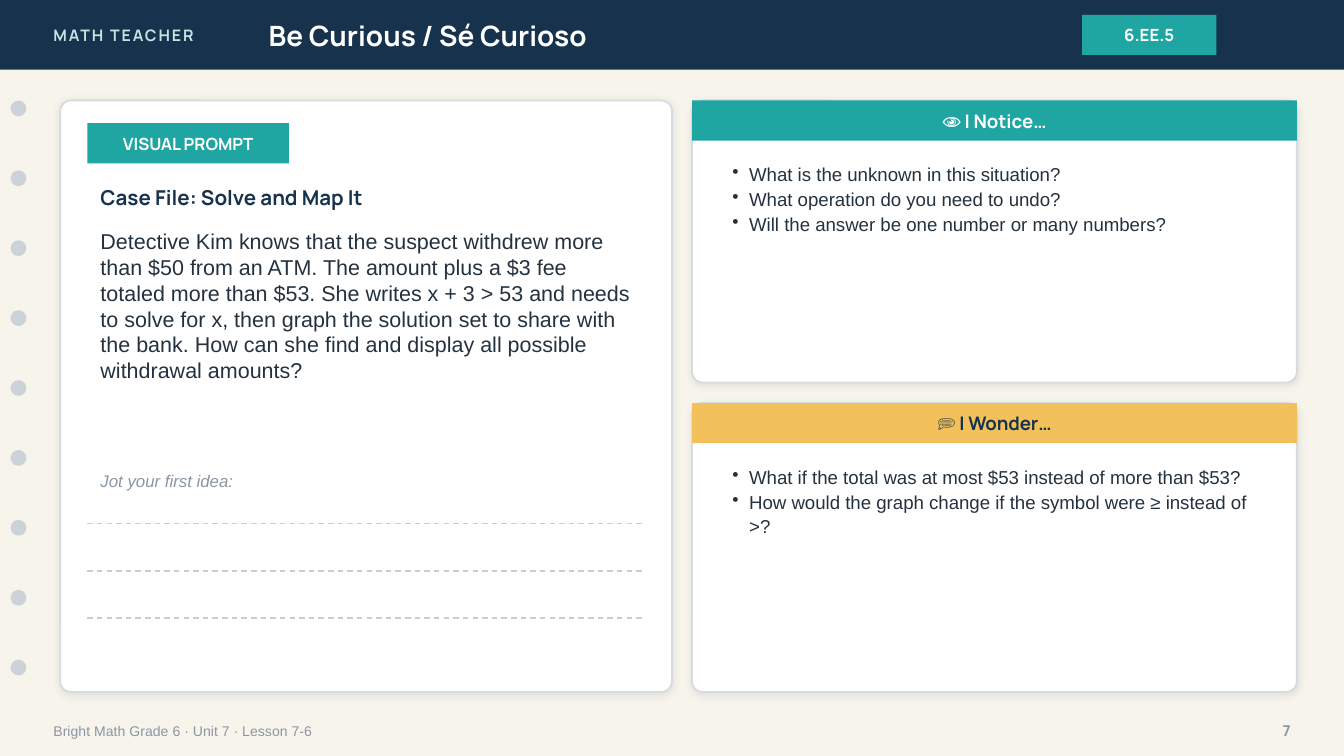
from dataclasses import dataclass

from lxml import etree
from pptx import Presentation
from pptx.dml.color import RGBColor
from pptx.enum.dml import MSO_LINE
from pptx.enum.shapes import MSO_CONNECTOR, MSO_SHAPE
from pptx.enum.text import MSO_ANCHOR, PP_ALIGN
from pptx.oxml.ns import qn
from pptx.util import Cm, Pt

RECTANGLE = MSO_SHAPE.RECTANGLE
ROUNDED = MSO_SHAPE.ROUNDED_RECTANGLE
OVAL = MSO_SHAPE.OVAL
STRAIGHT = MSO_CONNECTOR.STRAIGHT
DASH = MSO_LINE.DASH
TOP = MSO_ANCHOR.TOP
MIDDLE = MSO_ANCHOR.MIDDLE
LEFT = PP_ALIGN.LEFT
CENTER = PP_ALIGN.CENTER
RIGHT = PP_ALIGN.RIGHT


@dataclass(frozen=True)
class Theme:
    paper: str = "F7F4EC"
    navy: str = "17324D"
    teal: str = "1FA6A2"
    mint: str = "BFE6E2"
    amber: str = "F2C15B"
    white: str = "FFFFFF"
    ink: str = "24323F"
    muted: str = "8A96A3"
    hole: str = "CBD3D9"
    rule: str = "C7CDD2"
    border: str = "D6DBDF"
    shadow: str = "1C2E42"
    display: str = "Manrope"
    text: str = "Arial"
    title_size: float = 15
    prompt_size: float = 11.5
    heading_size: float = 11
    panel_size: float = 10
    label_size: float = 9
    brand_size: float = 8.5
    page_size: float = 8
    footer_size: float = 7.5


@dataclass(frozen=True)
class Box:
    left: float
    top: float
    width: float
    height: float

    def inner(self, left, top, width, height):
        return Box(self.left + left, self.top + top, width, height)

    def lengths(self):
        return Cm(self.left), Cm(self.top), Cm(self.width), Cm(self.height)


THEME = Theme()


def rgb(value):
    return RGBColor.from_string(value)


def add_bullet(paragraph, indent):
    properties = paragraph._p.get_or_add_pPr()
    properties.set("marL", str(Cm(indent)))
    properties.set("indent", str(-Cm(indent)))
    etree.SubElement(properties, qn("a:buChar")).set("char", "•")


def write_text(shape, text, *, size, color, font=THEME.display, bold=False, italic=False,
               align=LEFT, anchor=MIDDLE, line_spacing=None, tracking=None, bullet_indent=None):
    frame = shape.text_frame
    frame.word_wrap = True
    frame.vertical_anchor = anchor
    frame.text = text
    for paragraph in frame.paragraphs:
        paragraph.alignment = align
        if line_spacing:
            paragraph.line_spacing = line_spacing
        if bullet_indent:
            add_bullet(paragraph, bullet_indent)
        for run in paragraph.runs:
            run.font.name = font
            run.font.size = Pt(size)
            run.font.bold = bold
            run.font.italic = italic
            run.font.color.rgb = rgb(color)
            if tracking:
                run._r.get_or_add_rPr().set("spc", str(tracking * 100))


def add_text(slide, box, text, **text_format):
    write_text(slide.shapes.add_textbox(*box.lengths()), text, **text_format)


def add_block(slide, box, fill, kind=RECTANGLE):
    shape = slide.shapes.add_shape(kind, *box.lengths())
    shape.shadow.inherit = False
    shape.fill.solid()
    shape.fill.fore_color.rgb = rgb(fill)
    shape.line.fill.background()
    return shape


def add_label(slide, box, text, fill, color=THEME.white, size=THEME.label_size):
    block = add_block(slide, box, fill)
    write_text(block, text, size=size, color=color, bold=True, align=CENTER)


def add_card(slide, box, radius=0.2):
    card = add_block(slide, box, THEME.white, ROUNDED)
    card.adjustments[0] = radius / min(box.width, box.height)
    card.line.color.rgb = rgb(THEME.border)
    card.line.width = Pt(1)
    effects = card._element.spPr.find(qn("a:effectLst"))
    shadow = etree.SubElement(effects, qn("a:outerShdw"), blurRad=str(Pt(4)),
                              dist=str(Pt(1)), dir="5400000", rotWithShape="0")
    color = etree.SubElement(shadow, qn("a:srgbClr"), val=THEME.shadow)
    etree.SubElement(color, qn("a:alpha"), val="10000")


def add_writing_line(slide, left, top, width):
    line = slide.shapes.add_connector(STRAIGHT, Cm(left), Cm(top), Cm(left + width), Cm(top))
    line.line.color.rgb = rgb(THEME.rule)
    line.line.width = Pt(0.75)
    line.line.dash_style = DASH
    etree.SubElement(line._element.spPr, qn("a:effectLst"))


def build_header(slide, box, brand, title, standard):
    add_block(slide, box, THEME.navy)
    add_text(slide, box.inner(0.76, 0, 6.1, box.height), brand,
             size=THEME.brand_size, color=THEME.mint, bold=True, tracking=1)
    add_text(slide, box.inner(4.83, 0, 14.22, box.height), title,
             size=THEME.title_size, color=THEME.white, bold=True)
    add_label(slide, box.inner(20.45, 0.28, 2.54, 0.76), standard, THEME.teal)


def build_binder_holes(slide, box, count):
    step = (box.height - box.width) / (count - 1)
    for index in range(count):
        add_block(slide, box.inner(0, index * step, box.width, box.width), THEME.hole, OVAL)


def build_footer(slide, box, text, page):
    add_text(slide, box.inner(0, 0, 17.78, box.height), text,
             size=THEME.footer_size, color=THEME.muted, font=THEME.text)
    page_width = 1.27
    add_text(slide, box.inner(box.width - page_width, 0, page_width, box.height), page,
             size=THEME.page_size, color=THEME.muted, bold=True, align=RIGHT)


def build_prompt(slide, box, tag, heading, story, hint):
    padding = 0.51
    width = box.width - 2 * padding
    add_card(slide, box)
    add_label(slide, box.inner(padding, 0.43, 3.81, 0.76), tag, THEME.teal)
    add_text(slide, box.inner(padding, 1.45, width, 0.76), heading,
             size=THEME.heading_size, color=THEME.navy, bold=True)
    add_text(slide, box.inner(padding, 2.29, width, 4.32), story,
             size=THEME.prompt_size, color=THEME.ink, font=THEME.text, anchor=TOP)
    add_text(slide, box.inner(padding, 6.86, 10.16, 0.64), hint,
             size=THEME.label_size, color=THEME.muted, font=THEME.text, italic=True)
    for index in range(3):
        add_writing_line(slide, box.left + padding, box.top + 8 + index * 0.89, width)


def build_question_panel(slide, box, title, questions, fill, color):
    padding = 0.51
    add_card(slide, box)
    add_label(slide, box.inner(0, 0, box.width, 0.76), title, fill, color, THEME.panel_size)
    body = box.inner(padding, 1.02, box.width - 2 * padding, box.height - 1.27)
    add_text(slide, body, "\n".join(questions), size=THEME.panel_size, color=THEME.ink,
             font=THEME.text, anchor=TOP, line_spacing=1.1, bullet_indent=0.32)


def main():
    presentation = Presentation()
    presentation.slide_width = Cm(25.4)
    presentation.slide_height = Cm(14.29)
    slide = presentation.slides.add_slide(presentation.slide_layouts[6])
    slide.background.fill.solid()
    slide.background.fill.fore_color.rgb = rgb(THEME.paper)

    build_header(slide, Box(0, 0, 25.4, 1.32), "MATH TEACHER", "Be Curious / Sé Curioso", "6.EE.5")
    build_binder_holes(slide, Box(0.2, 1.9, 0.3, 10.87), 9)
    build_footer(slide, Box(0.76, 13.46, 23.88, 0.71),
                 "Bright Math Grade 6 · Unit 7 · Lesson 7-6", "7")
    build_prompt(
        slide, Box(1.14, 1.9, 11.56, 11.18), "VISUAL PROMPT", "Case File: Solve and Map It",
        "Detective Kim knows that the suspect withdrew more than $50 from an ATM. "
        "The amount plus a $3 fee totaled more than $53. She writes x + 3 > 53 and needs "
        "to solve for x, then graph the solution set to share with the bank. "
        "How can she find and display all possible withdrawal amounts?",
        "Jot your first idea:")
    build_question_panel(
        slide, Box(13.08, 1.9, 11.43, 5.33), "👁 I Notice…",
        ["What is the unknown in this situation?",
         "What operation do you need to undo?",
         "Will the answer be one number or many numbers?"],
        THEME.teal, THEME.white)
    build_question_panel(
        slide, Box(13.08, 7.62, 11.43, 5.46), "💭 I Wonder…",
        ["What if the total was at most $53 instead of more than $53?",
         "How would the graph change if the symbol were ≥ instead of >?"],
        THEME.amber, THEME.navy)

    presentation.save("out.pptx")


if __name__ == "__main__":
    main()
